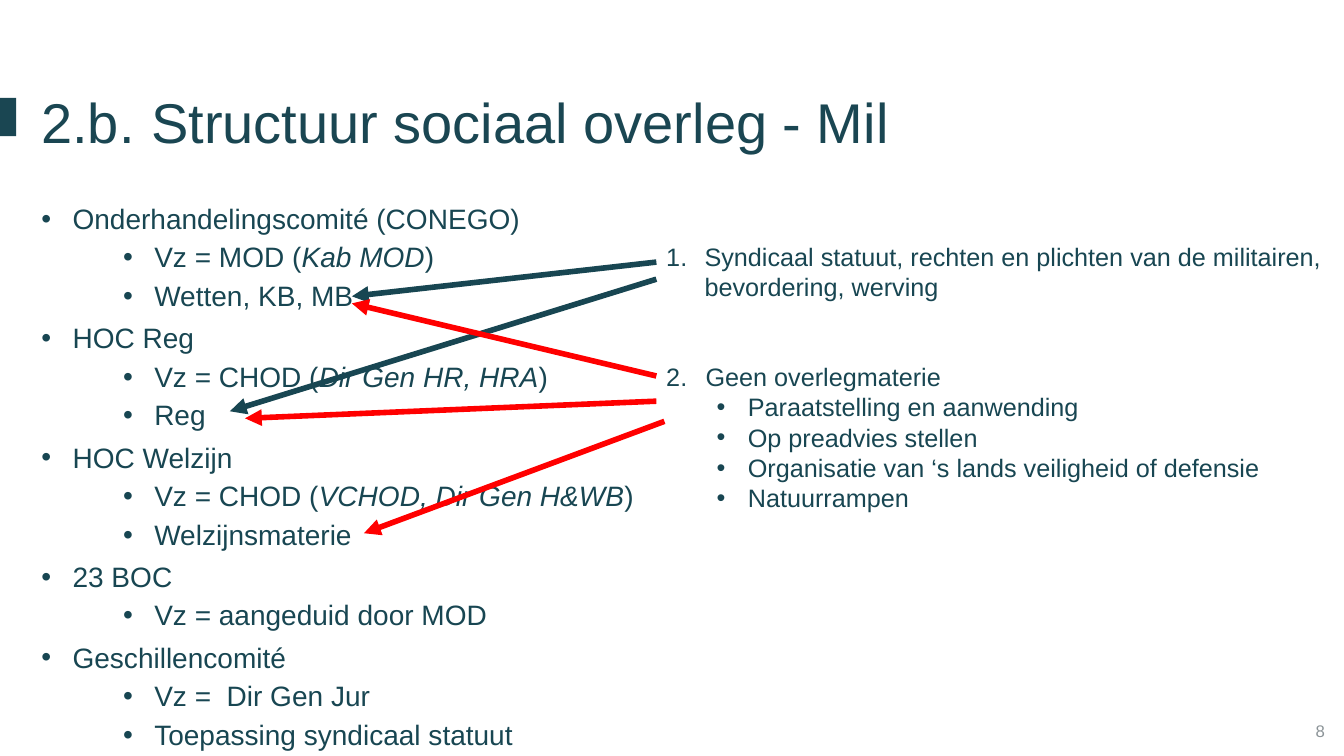
import pptx
import pptx.dml.color
import pptx.enum.shapes
import pptx.enum.text
import pptx.oxml.ns
import pptx.util
from lxml import etree

Inches, Pt = pptx.util.Inches, pptx.util.Pt
RGBColor = pptx.dml.color.RGBColor
ANCHOR = pptx.enum.text.MSO_ANCHOR
ALIGN = pptx.enum.text.PP_ALIGN
qn = pptx.oxml.ns.qn

PETROL = RGBColor(0x1A, 0x46, 0x52)
TEAL = RGBColor(0x18, 0x46, 0x52)
RED = RGBColor(0xFF, 0x00, 0x00)
GREY = RGBColor(0x8C, 0x94, 0x98)

BULLET = ("a:buChar", {"char": "•"})
NO_BULLET = ("a:buNone", {})


def number(start):
    return "a:buAutoNum", {"type": "arabicPeriod", "startAt": str(start)}


# Each committee item: level and text; *...* marks italics
COMMITTEES = [
    (0, "Onderhandelingscomité (CONEGO)"),
    (1, "Vz = MOD (*Kab MOD*)"),
    (1, "Wetten, KB, MB"),
    (0, "HOC Reg"),
    (1, "Vz = CHOD (*Dir Gen HR, HRA*)"),
    (1, "Reg"),
    (0, "HOC Welzijn"),
    (1, "Vz = CHOD (*VCHOD, Dir Gen H&WB*)"),
    (1, "Welzijnsmaterie"),
    (0, "23 BOC"),
    (1, "Vz = aangeduid door MOD"),
    (0, "Geschillencomité"),
    (1, "Vz =  Dir Gen Jur"),
    (1, "Toepassing syndicaal statuut"),
]
EXCLUDED = [
    "Paraatstelling en aanwending",
    "Op preadvies stellen",
    "Organisatie van ‘s lands veiligheid of defensie",
    "Natuurrampen",
]
# Start, end, colour
ARROWS = [
    ((6.51, 2.6), (3.49, 2.94), TEAL),
    ((6.51, 2.77), (2.28, 4.08), TEAL),
    ((6.51, 3.98), (2.43, 4.15), RED),
    ((6.51, 3.73), (3.49, 3.01), RED),
    ((6.59, 4.18), (3.61, 5.29), RED),
]


class SlideBuilder:
    """Holds the text style and the slide being filled."""

    font_name = "Arial"

    def __init__(self, slide):
        self.slide = slide

    def bar(self, box, color):
        bar = self.slide.shapes.add_shape(
            pptx.enum.shapes.MSO_SHAPE.RECTANGLE, *map(Inches, box))
        bar.shadow.inherit = False
        bar.fill.solid()
        bar.fill.fore_color.rgb = color
        bar.line.fill.background()

    def placeholder(self, index, box, paragraphs, size, color):
        holder = self.slide.placeholders[index]
        holder.left, holder.top, holder.width, holder.height = map(Inches, box)
        self.fill_text(holder.text_frame, paragraphs, size, color)

    def text_box(self, box, paragraphs, size, color, anchor=ANCHOR.TOP):
        label = self.slide.shapes.add_textbox(*map(Inches, box))
        self.fill_text(label.text_frame, paragraphs, size, color, anchor)

    def fill_text(self, frame, paragraphs, size, color, anchor=ANCHOR.TOP):
        """Write (text, margin, hang, marker, format) tuples into a frame."""
        settings = {"word_wrap": True, "vertical_anchor": anchor,
                    "auto_size": pptx.enum.text.MSO_AUTO_SIZE.NONE}
        for key, value in settings.items():
            setattr(frame, key, value)
        for position, (text, margin, hang, marker, form) in enumerate(paragraphs):
            paragraph = frame.add_paragraph() if position else frame.paragraphs[0]
            properties = paragraph._p.get_or_add_pPr()
            properties.set("marL", str(Inches(margin)))
            properties.set("indent", str(-Inches(hang)))
            if marker == BULLET:
                etree.SubElement(properties, qn("a:buFont"), typeface=self.font_name)
            tag, attributes = marker
            etree.SubElement(properties, qn(tag), attributes)
            spacing = {"alignment": ALIGN.LEFT, "space_before": Pt(0),
                       "space_after": Pt(0), "line_spacing": 1.0, **form}
            if position == 0:
                spacing["space_before"] = Pt(0)
            for key, value in spacing.items():
                setattr(paragraph, key, value)
            self.add_runs(paragraph, text, size, color)

    def add_runs(self, paragraph, text, size, color):
        for index, part in enumerate(text.split("*")):
            run = paragraph.add_run()
            run.text = part
            font = {"name": self.font_name, "size": Pt(size),
                    "bold": False, "italic": index % 2 == 1}
            for key, value in font.items():
                setattr(run.font, key, value)
            run.font.color.rgb = color

    def arrow(self, start, end, color):
        arrow = self.slide.shapes.add_connector(
            pptx.enum.shapes.MSO_CONNECTOR.STRAIGHT, *map(Inches, start + end))
        arrow.line.color.rgb = color
        arrow.line.width = Pt(4)
        etree.SubElement(arrow.line._get_or_add_ln(), qn("a:tailEnd"), type="triangle")
        etree.SubElement(arrow._element.spPr, qn("a:effectLst"))


def main():
    deck = pptx.Presentation()
    deck.slide_width, deck.slide_height = Inches(13.33), Inches(7.5)
    builder = SlideBuilder(deck.slides.add_slide(deck.slide_layouts[1]))

    builder.bar((0, 0.97, 0.16, 0.38), PETROL)
    builder.text_box((10.24, 7.05, 3, 0.4),
                     [("8", 0, 0, NO_BULLET, {"alignment": ALIGN.RIGHT})],
                     12, GREY, ANCHOR.MIDDLE)
    builder.placeholder(
        0, (0.31, 0.82, 12.35, 0.77),
        [("2.b.\tStructuur sociaal overleg - Mil", 0.59, 0.59, NO_BULLET, {})],
        40, PETROL)

    committees = []
    for level, text in COMMITTEES:
        form = {"level": level, "space_before": Pt(3), "space_after": Pt(3),
                "line_spacing": 0.9 if level else 1.0}
        committees.append((text, 1.12 if level else 0.31, 0.31, BULLET, form))
    builder.placeholder(1, (0.31, 1.95, 12.29, 4.47), committees, 20, TEAL)

    topics = [
        ("Syndicaal statuut, rechten en plichten van de militairen, "
         "bevordering, werving", 0.38, 0.38, number(1), {}),
        ("Geen overlegmaterie", 0.39, 0.39, number(2), {"space_before": Pt(43)}),
    ]
    topics += [(text, 0.81, 0.31, BULLET, {"level": 1}) for text in EXCLUDED]
    builder.text_box((6.51, 2.34, 7, 2.83), topics, 18, TEAL)

    for start, end, color in ARROWS:
        builder.arrow(start, end, color)
    deck.save("out.pptx")


if __name__ == "__main__":
    main()
